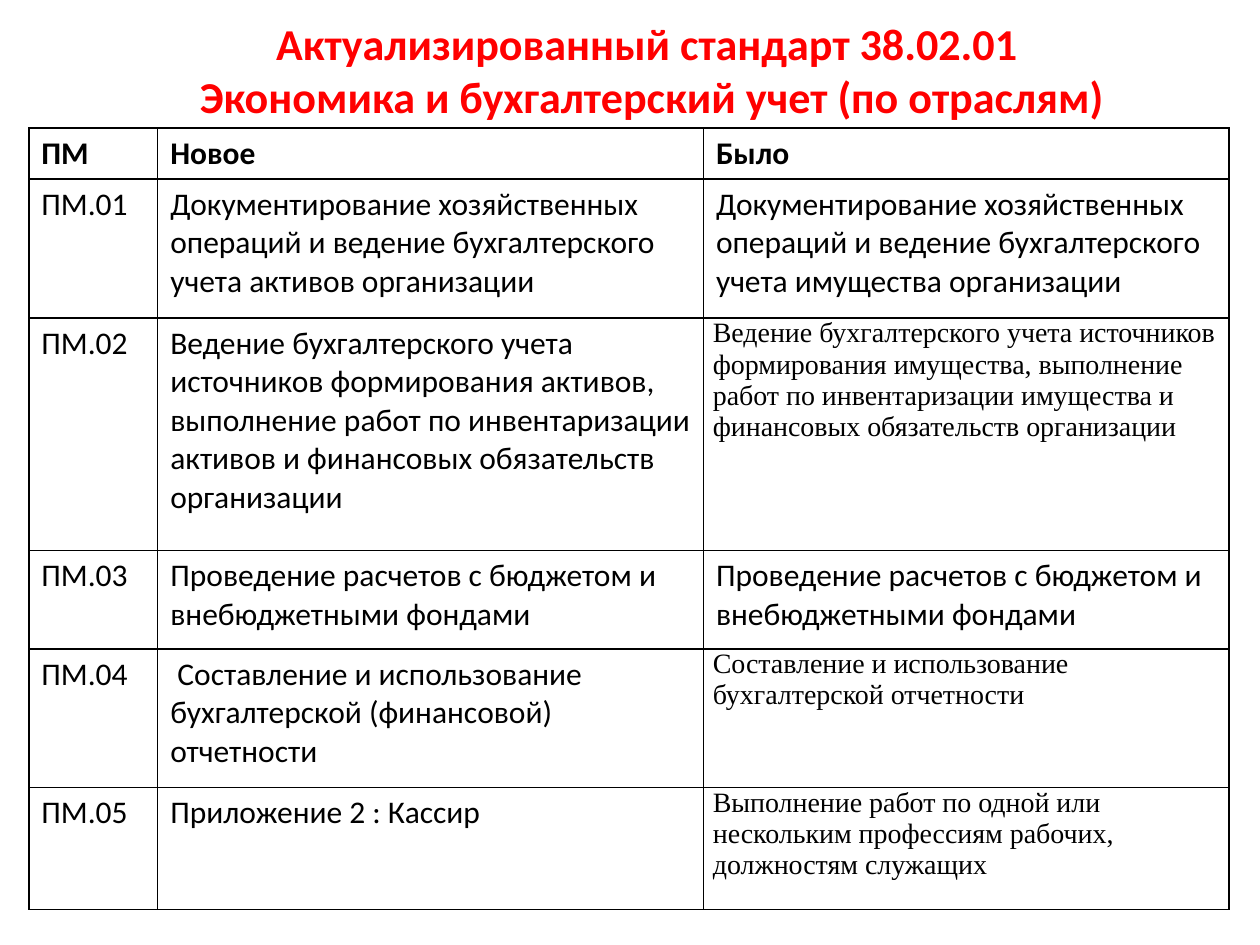
from dataclasses import dataclass

from lxml.etree import SubElement
from pptx import Presentation
from pptx.dml.color import RGBColor
from pptx.enum.text import MSO_ANCHOR, MSO_AUTO_SIZE, PP_ALIGN
from pptx.oxml.ns import qn
from pptx.util import Cm, Pt


@dataclass(frozen=True)
class Theme:
    """Colours, fonts and type sizes of the deck."""
    paper: RGBColor = RGBColor(255, 255, 255)
    ink: RGBColor = RGBColor(0, 0, 0)
    accent: RGBColor = RGBColor(255, 0, 0)
    main_font: str = "Calibri"
    old_font: str = "Times New Roman"
    title_size: float = 25.2
    table_size: float = 18
    old_size: float = 16
    border: float = 1


@dataclass(frozen=True)
class Box:
    """A region of the page, in centimetres."""
    left: float
    top: float
    width: float
    height: float


THEME = Theme()
COLUMN_WIDTHS = (2.6, 11, 10.6)
ROW_HEIGHTS = (1.03, 2.8, 4.69, 1.98, 2.8, 2.46)
HEADINGS = ("ПМ", "Новое", "Было")
MODULES = (
    ("ПМ.01",
     "Документирование хозяйственных операций и ведение бухгалтерского учета активов организации",
     "Документирование хозяйственных операций и ведение бухгалтерского учета имущества организации"),
    ("ПМ.02",
     "Ведение бухгалтерского учета источников формирования активов, выполнение работ "
     "по инвентаризации активов и финансовых обязательств организации",
     "Ведение бухгалтерского учета источников формирования имущества, выполнение работ "
     "по инвентаризации имущества и финансовых обязательств организации"),
    ("ПМ.03",
     "Проведение расчетов с бюджетом и внебюджетными фондами",
     "Проведение расчетов с бюджетом и внебюджетными фондами"),
    ("ПМ.04",
     " Составление и использование бухгалтерской (финансовой) отчетности",
     "Составление и использование бухгалтерской отчетности"),
    ("ПМ.05",
     "Приложение 2 : Кассир",
     "Выполнение работ по одной или нескольким профессиям рабочих, должностям служащих"),
)
OLD_STYLE_MODULES = {"ПМ.02", "ПМ.04", "ПМ.05"}


def write_text(frame, text, *, size=THEME.table_size, font=THEME.main_font,
               color=THEME.ink, bold=False, align=PP_ALIGN.LEFT):
    """Write text into the first paragraph, with a line break at each newline."""
    para = frame.paragraphs[0]
    para.alignment = align
    for index, line in enumerate(text.split("\n")):
        if index:
            para.add_line_break()
        span = para.add_run()
        span.text = line
        span.font.size = Pt(size)
        span.font.name = font
        span.font.bold = bold
        span.font.color.rgb = color


def add_borders(cell):
    """Draw a thin line on all four sides of a cell, before its fill is set."""
    properties = cell._tc.get_or_add_tcPr()
    for side in ("a:lnL", "a:lnR", "a:lnT", "a:lnB"):
        line = SubElement(properties, qn(side), w=str(Pt(THEME.border)))
        fill = SubElement(line, qn("a:solidFill"))
        SubElement(fill, qn("a:srgbClr"), val=str(THEME.ink))


def place_title(page, box, text):
    """Place the title placeholder in its box."""
    title = page.shapes.title
    title.left, title.top = Cm(box.left), Cm(box.top)
    title.width, title.height = Cm(box.width), Cm(box.height)
    title.fill.solid()
    title.fill.fore_color.rgb = THEME.paper
    frame = title.text_frame
    frame.word_wrap = True
    frame.auto_size = MSO_AUTO_SIZE.NONE
    frame.vertical_anchor = MSO_ANCHOR.MIDDLE
    write_text(frame, text, size=THEME.title_size, color=THEME.accent,
               bold=True, align=PP_ALIGN.CENTER)


def fill_cell(cell, text, *, heading=False, old_style=False):
    """Format one cell and write its text."""
    add_borders(cell)
    cell.fill.solid()
    cell.fill.fore_color.rgb = THEME.paper
    if old_style:
        cell.margin_left = cell.margin_right = Cm(0.19)
        cell.margin_top = cell.margin_bottom = 0
        write_text(cell.text_frame, text, size=THEME.old_size, font=THEME.old_font)
    else:
        write_text(cell.text_frame, text, bold=heading)


def place_table(page, box):
    """Place the comparison of new and former modules in its box."""
    rows = (HEADINGS, *MODULES)
    table = page.shapes.add_table(len(rows), len(HEADINGS), Cm(box.left), Cm(box.top),
                                  Cm(box.width), Cm(box.height)).table
    table.horz_banding = False
    for column, width in zip(table.columns, COLUMN_WIDTHS):
        column.width = Cm(width)
    for row, height, texts in zip(table.rows, ROW_HEIGHTS, rows):
        row.height = Cm(height)
        for index, (cell, text) in enumerate(zip(row.cells, texts)):
            fill_cell(cell, text, heading=texts is HEADINGS,
                      old_style=index == 2 and texts[0] in OLD_STYLE_MODULES)


def main():
    """Build the deck and save it."""
    deck = Presentation()
    deck.slide_width, deck.slide_height = Cm(25.4), Cm(19.05)
    page = deck.slides.add_slide(deck.slide_layouts[5])
    place_title(page, Box(1.27, 0.41, 23.55, 1.98),
                "Актуализированный стандарт 38.02.01\n Экономика и бухгалтерский учет (по отраслям)")
    place_table(page, Box(0.58, 2.58, sum(COLUMN_WIDTHS), sum(ROW_HEIGHTS)))
    deck.save("out.pptx")


if __name__ == "__main__":
    main()
